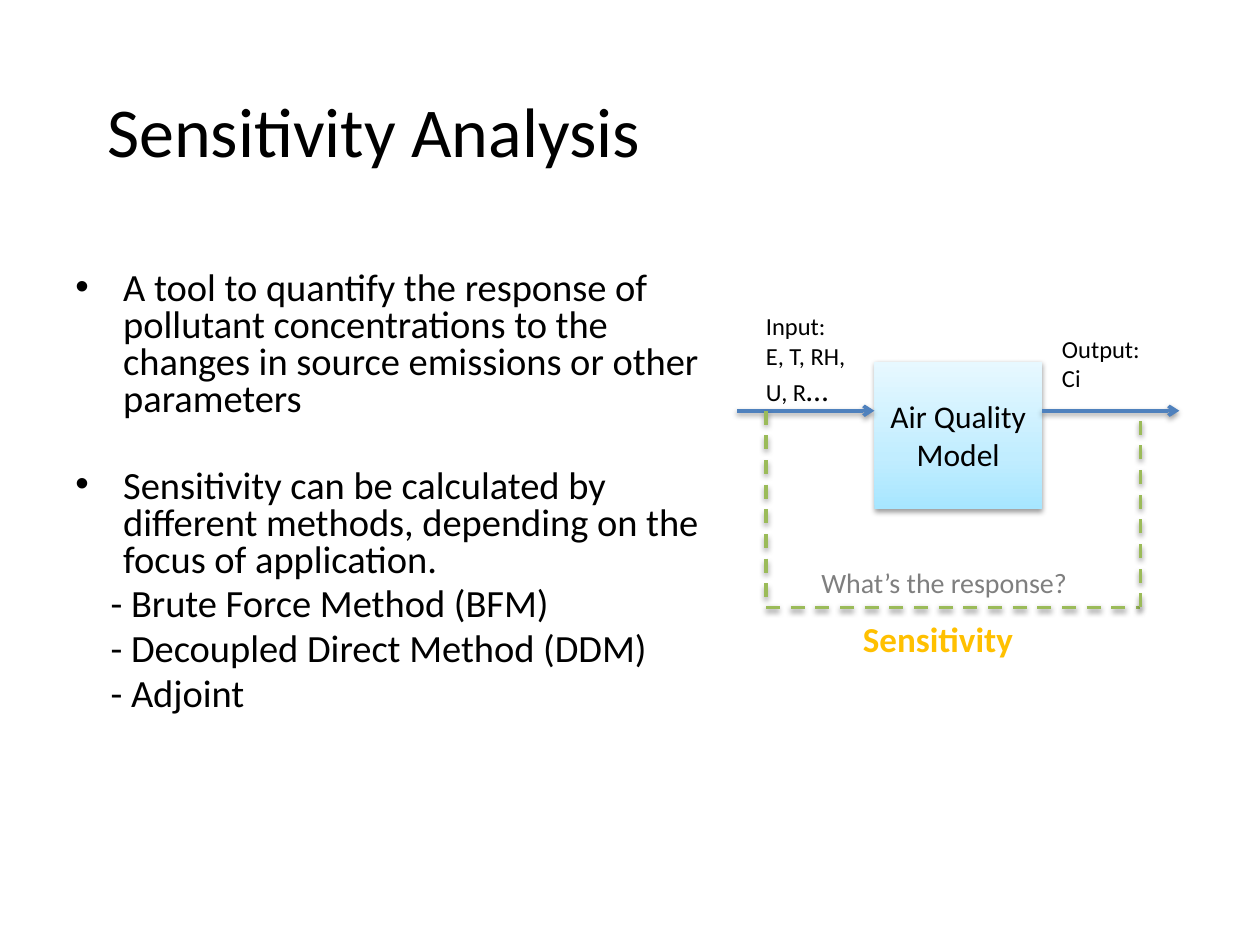
import copy

import pptx
import pptx.dml.color
import pptx.enum.dml
import pptx.enum.shapes
import pptx.enum.text
import pptx.oxml
import pptx.oxml.ns
import pptx.util

RGB = pptx.dml.color.RGBColor
BLACK = RGB(0, 0, 0)
GRAY = RGB(0x7F, 0x7F, 0x7F)
GOLD = RGB(0xFF, 0xC0, 0)
BLUE = RGB(0x4F, 0x81, 0xBD)
GREEN = RGB(0x9B, 0xBB, 0x59)
SKY = [RGB(0xA7, 0xE6, 0xFF), RGB(0xC1, 0xED, 0xFF), RGB(0xE7, 0xF8, 0xFF)]

Pt = pptx.util.Pt
ALIGN = pptx.enum.text.PP_ALIGN
MID = pptx.enum.text.MSO_ANCHOR.MIDDLE
DASH = pptx.enum.dml.MSO_LINE.DASH
NS = pptx.oxml.ns.nsdecls("a")

# Grid of 100 columns by 75 rows
CELL = pptx.util.Inches(0.1)

SHADE = (f'<a:effectLst {NS}><a:outerShdw blurRad="39370" dist="20320" '
         'dir="5400000" rotWithShape="0"><a:srgbClr val="000000">'
         '<a:alpha val="38000"/></a:srgbClr></a:outerShdw></a:effectLst>')

BODY = [
    ("A tool to quantify the response of pollutant concentrations "
     "to the changes in source emissions or other parameters", True, 0),
    ("Sensitivity can be calculated by different methods, "
     "depending on the focus of application.", True, 28.5),
    ("- Brute Force Method (BFM)", False, 4.4),
    ("- Decoupled Direct Method (DDM)", False, 4.4),
    ("- Adjoint", False, 4.4),
]


def grid(*nums):
    return [round(n * CELL) for n in nums]


def style(font, size, color=BLACK, bold=False):
    look = {"name": "Calibri", "size": Pt(size), "bold": bold}
    for key, val in look.items():
        setattr(font, key, val)
    font.color.rgb = color


def shade(item):
    props = item._element.spPr
    for old in props.findall(pptx.oxml.ns.qn("a:effectLst")):
        props.remove(old)
    props.append(pptx.oxml.parse_xml(SHADE))


def write(frame, lines, size, color=BLACK, bold=False, align=ALIGN.LEFT):
    frame.word_wrap = True
    for i, line in enumerate(lines):
        para = frame.add_paragraph() if i else frame.paragraphs[0]
        para.alignment = align
        run = para.add_run()
        run.text = line
        style(run.font, size, color, bold)


def label(slide, place, lines, size, color=BLACK, bold=False):
    frame = slide.shapes.add_textbox(*grid(*place)).text_frame
    write(frame, lines, size, color, bold)
    return frame


def link(slide, ends, color, dash=False):
    kind = pptx.enum.shapes.MSO_CONNECTOR.STRAIGHT
    line = slide.shapes.add_connector(kind, *grid(*ends))
    line.line.color.rgb = color
    line.line.width = Pt(2)
    if dash:
        line.line.dash_style = DASH
    else:
        head = pptx.oxml.parse_xml(f'<a:tailEnd {NS} type="arrow"/>')
        line.line._get_or_add_ln().append(head)
    shade(line)


def model(slide, place):
    kind = pptx.enum.shapes.MSO_SHAPE.RECTANGLE
    box = slide.shapes.add_shape(kind, *grid(*place))
    box.line.fill.background()
    box.fill.gradient()
    box.fill.gradient_angle = 90
    # The middle stop is added between the two that are there
    first = box._element.spPr.find(".//" + pptx.oxml.ns.qn("a:gs"))
    first.addnext(copy.deepcopy(first))
    for stop, color, pos in zip(box.fill.gradient_stops, SKY, (0, 0.35, 1)):
        stop.color.rgb = color
        stop.position = pos
    shade(box)
    box.text_frame.vertical_anchor = MID
    write(box.text_frame, ["Air Quality", "Model"], 18, align=ALIGN.CENTER)


def indent(para, left, hang=0):
    props = para._p.get_or_add_pPr()
    props.set("marL", str(grid(left)[0]))
    props.set("indent", str(grid(-hang)[0]))
    return props


def title(slide):
    head = slide.shapes.title
    head.left, head.top, head.width, head.height = grid(5, 5, 90, 10.5)
    head.text_frame.vertical_anchor = MID
    write(head.text_frame, ["Sensitivity Analysis"], 40)
    indent(head.text_frame.paragraphs[0], 2.5)


def body(slide):
    frame = label(slide, (5, 21.1, 51.7, 47.6), [row[0] for row in BODY], 22)
    for para, (_, dot, gap) in zip(frame.paragraphs, BODY):
        para.line_spacing = 0.8
        para.space_before = Pt(gap)
        if dot:
            props = indent(para, 3.8, 3.8)
            for tag in ('buFont {} typeface="Arial"', 'buChar {} char="•"'):
                mark = pptx.oxml.parse_xml(f"<a:{tag.format(NS)}/>")
                props.append(mark)
        else:
            indent(para, 2.8)


def flow(slide):
    model(slide, (69.4, 28.7, 13.3, 11.7))
    # Arrows into and out of the model
    axis, left, right, low = 32.6, 60.8, 90.5, 48.2
    for start in (58.5, 82.7):
        link(slide, (start, axis, start + 10.9, axis), BLUE)
    # Dashed loop from input to output
    loop = [(left, axis), (left, low), (right, low), (right, axis)]
    for a, b in zip(loop, loop[1:]):
        link(slide, a + b, GREEN, dash=True)
    # Labels
    names = label(slide, (59.8, 24.2, 10.2, 8.7),
                  ["Input:", "E, T, RH,", "U, R"], 14)
    dots = names.paragraphs[-1].add_run()
    dots.text = "…"
    style(dots.font, 18)
    label(slide, (83.3, 26, 8.4, 5.7), ["Output:", "Ci"], 14)
    label(slide, (67.5, 48.5, 15.9, 4.3), ["Sensitivity"], 20, GOLD, True)
    label(slide, (64.2, 44.4, 24.2, 4), ["What’s the response?"], 16, GRAY)


def main():
    deck = pptx.Presentation()
    deck.slide_width, deck.slide_height = grid(100, 75)
    slide = deck.slides.add_slide(deck.slide_layouts[5])
    title(slide)
    body(slide)
    flow(slide)
    deck.save("out.pptx")


if __name__ == "__main__":
    main()
